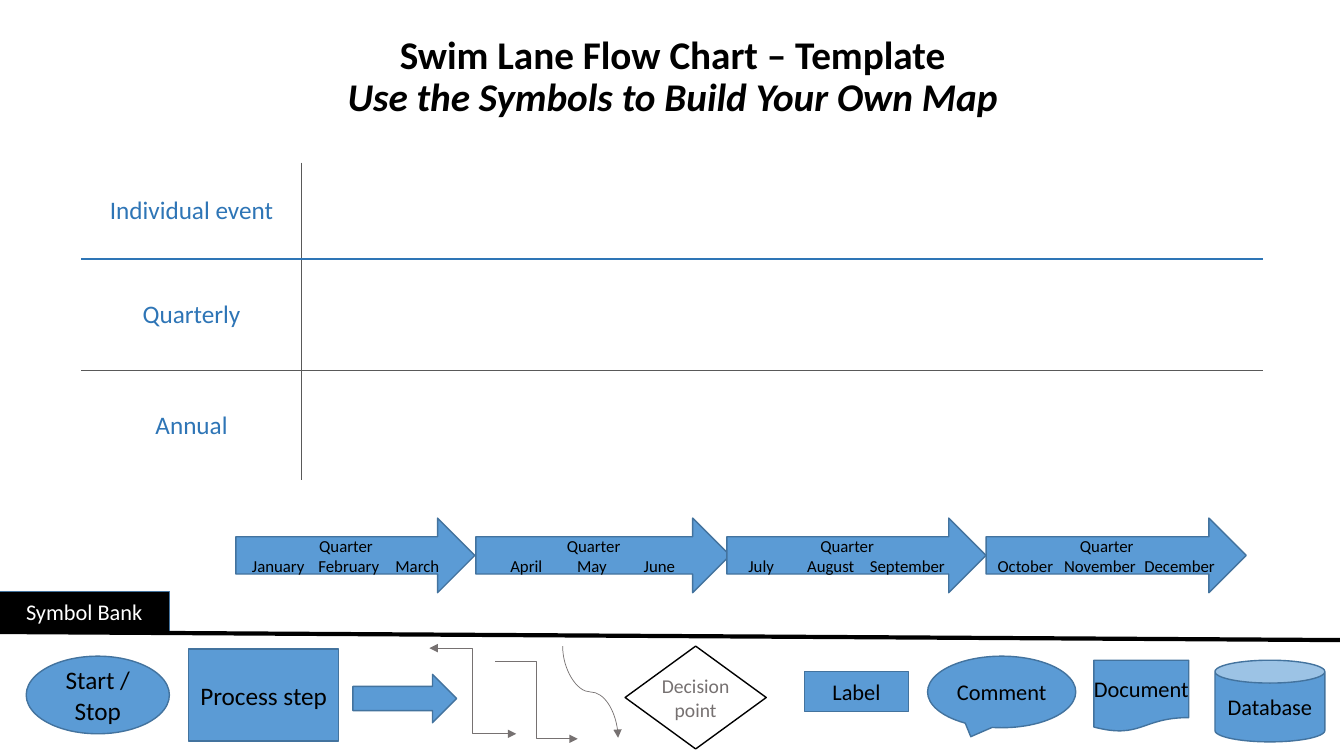
from lxml import etree
from pptx import Presentation
from pptx.dml.color import RGBColor
from pptx.enum.shapes import MSO_CONNECTOR, MSO_SHAPE
from pptx.enum.text import MSO_ANCHOR, PP_ALIGN
from pptx.oxml.ns import qn
from pptx.util import Pt

PX = 9144  # 100 px to the inch
CENTER, LEFT = PP_ALIGN.CENTER, PP_ALIGN.LEFT
MIDDLE = MSO_ANCHOR.MIDDLE
ARROW, RECT = MSO_SHAPE.RIGHT_ARROW, MSO_SHAPE.RECTANGLE
STRAIGHT, ELBOW, CURVE = MSO_CONNECTOR.STRAIGHT, MSO_CONNECTOR.ELBOW, MSO_CONNECTOR.CURVE
BLUE, EDGE, LANE_BLUE = "5B9BD5", "43739E", "2E75B6"
GREY, LANE_GREY, BLACK, WHITE = "767171", "595959", "000000", "FFFFFF"


def rgb(value):
    return RGBColor.from_string(value)


def write(frame, lines, size, color, **extra):
    """Fill a text frame with centred, vertically centred lines without insets."""
    frame.word_wrap = True
    frame.vertical_anchor = MIDDLE
    for side in ("left", "top", "right", "bottom"):
        setattr(frame, f"margin_{side}", 0)
    for index, line in enumerate(lines):
        para = frame.paragraphs[0] if index == 0 else frame.add_paragraph()
        para.alignment = CENTER
        span = para.add_run()
        span.text = line
        span.font.color.rgb = rgb(color)
        for name, value in {"name": "Calibri", "size": Pt(size), "bold": False, **extra}.items():
            setattr(span.font, name, value)


deck = Presentation()
deck.slide_width, deck.slide_height = 1333 * PX, 750 * PX
page = deck.slides.add_slide(deck.slide_layouts[6])
shapes = page.shapes

# Title
title = shapes.add_textbox(92 * PX, 40 * PX, 1150 * PX, 74 * PX)
write(title.text_frame,
      ["Swim Lane Flow Chart – Template", "Use the Symbols to Build Your Own Map"],
      28, BLACK, bold=True)
for para in title.text_frame.paragraphs:
    para.line_spacing = 0.9
title.text_frame.paragraphs[1].runs[0].font.italic = True

# Swim lanes
lanes = ["Individual event", "Quarterly", "Annual"]
table = shapes.add_table(3, 2, 81 * PX, 162 * PX, 1171 * PX, 315 * PX).table
table.first_row = table.horz_banding = False
for column, width in zip(table.columns, (218, 953)):
    column.width = width * PX
for row, height in zip(table.rows, (95, 110, 110)):
    row.height = height * PX
white_edge, blue_edge, grey_edge = (WHITE, 1), (LANE_BLUE, 1.5), (LANE_GREY, 0.5)
lane_edges = [white_edge, blue_edge, grey_edge, white_edge]
column_edges = [white_edge, grey_edge, white_edge]
for row, lane in enumerate(lanes):
    for column in range(2):
        cell = table.cell(row, column)
        cell.vertical_anchor = MIDDLE
        if column == 0:
            write(cell.text_frame, [lane], 18, LANE_BLUE)
        borders = {"L": column_edges[column], "R": column_edges[column + 1],
                   "T": lane_edges[row], "B": lane_edges[row + 1]}
        properties = cell._tc.get_or_add_tcPr()
        for side, (color, width) in borders.items():
            border = etree.SubElement(properties, qn(f"a:ln{side}"), w=str(Pt(width)))
            fill = etree.SubElement(border, qn("a:solidFill"))
            etree.SubElement(fill, qn("a:srgbClr"), val=color)
        cell.fill.solid()
        cell.fill.fore_color.rgb = rgb(WHITE)

# Quarter arrows and symbol bank: kind, left, top, width, height, lines, size, fill, line, text
quarters = [
    (234, 237, ("January", "February", "March"), (42, 112, 180)),
    (472, 252, ("April", "May", "June"), (50, 115, 182)),
    (721, 257, ("July", "August", "September"), (34, 103, 179)),
    (978, 258, ("October", "November", "December"), (39, 113, 192)),
]
symbols = [
    (ARROW, left, 514, width, 74, ["Quarter", "\t" + "\t".join(months)], 12, BLUE, EDGE, BLACK)
    for left, width, months, _ in quarters
]
symbols += [
    (RECT, -1, 587, 169, 40, ["Symbol Bank"], 16, BLACK, EDGE, WHITE),
    (MSO_SHAPE.OVAL, 26, 651, 142, 77, ["Start / Stop"], 18, BLUE, EDGE, BLACK),
    (MSO_SHAPE.FLOWCHART_PROCESS, 187, 644, 149, 91, ["Process step"], 18, BLUE, EDGE, BLACK),
    (ARROW, 350, 669, 103, 48, [], 18, BLUE, EDGE, BLACK),
    (MSO_SHAPE.DIAMOND, 620, 641, 140, 102, ["Decision point"], 14, WHITE, BLACK, GREY),
    (RECT, 798, 666, 103, 40, ["Label"], 16, BLUE, EDGE, BLACK),
    (MSO_SHAPE.OVAL_CALLOUT, 920, 651, 147, 71, ["Comment"], 16, BLUE, EDGE, BLACK),
    (MSO_SHAPE.FLOWCHART_DOCUMENT, 1085, 655, 94, 71, ["Document"], 16, BLUE, EDGE, BLACK),
    (MSO_SHAPE.CAN, 1205, 655, 109, 81, ["Database"], 16, BLUE, EDGE, BLACK),
]
drawn = []
for kind, left, top, width, height, lines, size, fill, line, color in symbols:
    shape = shapes.add_shape(kind, left * PX, top * PX, width * PX, height * PX)
    shape.shadow.inherit = False
    shape.fill.solid()
    shape.fill.fore_color.rgb = rgb(fill)
    shape.line.color.rgb = rgb(line)
    shape.line.width = Pt(1)
    if lines:
        write(shape.text_frame, lines, size, color)
    drawn.append(shape)
drawn[-1].adjustments[0] = 0.28

# Each month is centred on its own tab stop
for shape, (_, _, _, stops) in zip(drawn, quarters):
    para = shape.text_frame.paragraphs[1]
    para.alignment = LEFT
    tabs = etree.SubElement(para._p.get_or_add_pPr(), qn("a:tabLst"))
    for stop in stops:
        etree.SubElement(tabs, qn("a:tab"), pos=str(stop * PX), algn="ctr")

# Connectors: kind, start, end, colour, width, arrow ends, rotation in degrees
connectors = [
    (STRAIGHT, (0, 627), (1329, 635), BLACK, 3, (), 0),
    (ELBOW, (426, 643), (512, 728), GREY, 0.5, ("headEnd", "tailEnd"), 0),
    (ELBOW, (491, 656), (573, 733), GREY, 0.5, ("tailEnd",), 0),
    (CURVE, (631, 659), (540, 714), GREY, 0.5, ("tailEnd",), 270),
]
for kind, start, end, color, width, arrow_ends, rotation in connectors:
    connector = shapes.add_connector(kind, *(value * PX for value in start + end))
    connector.line.color.rgb = rgb(color)
    connector.line.width = Pt(width)
    for arrow_end in arrow_ends:
        etree.SubElement(connector.line._get_or_add_ln(), qn(f"a:{arrow_end}"), type="triangle")
    properties = connector._element.spPr
    etree.SubElement(properties, qn("a:effectLst"))
    if rotation:
        properties.find(qn("a:xfrm")).set("rot", str(rotation * 60000))

deck.save("out.pptx")
